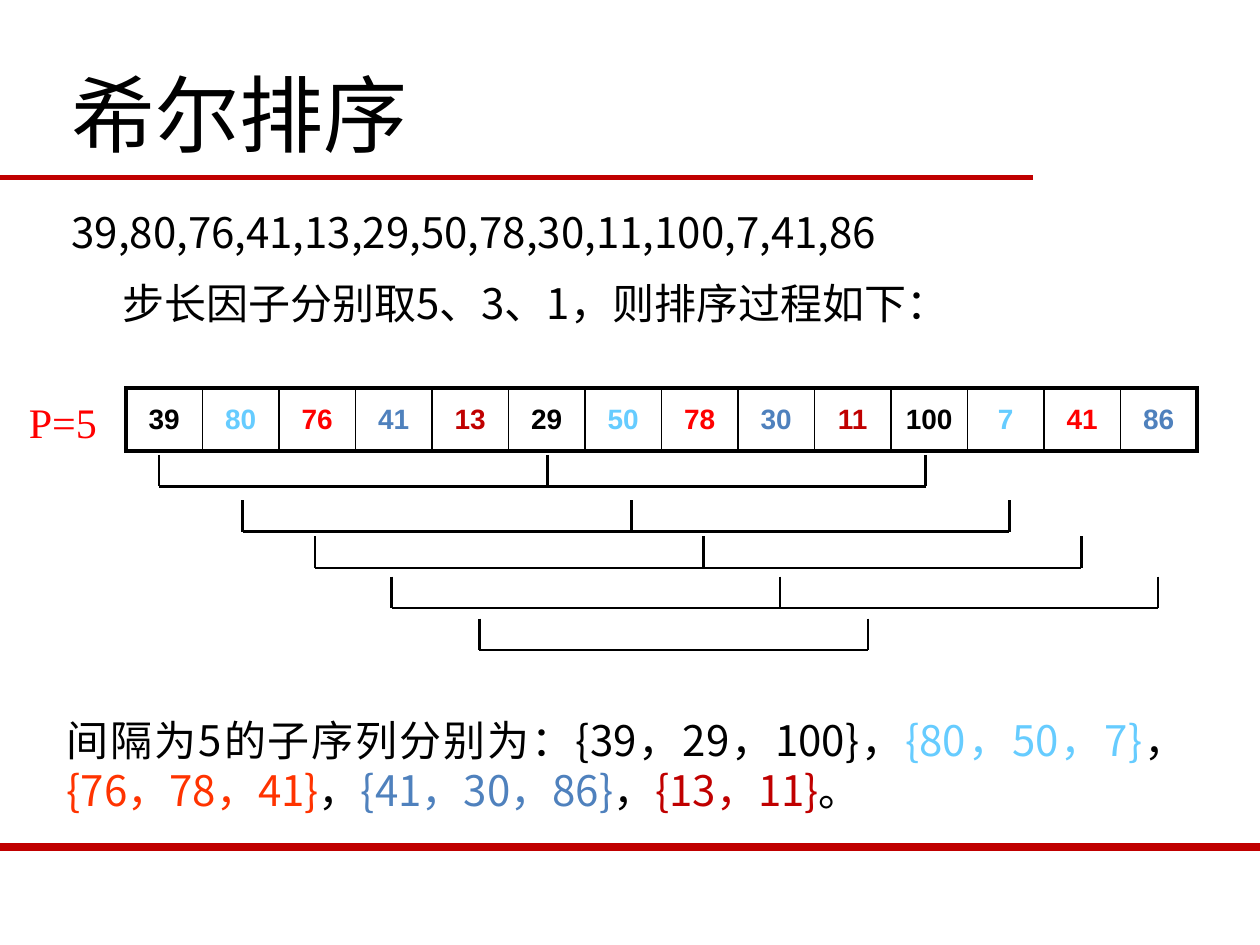
from lxml import etree
from pptx import Presentation
from pptx.dml.color import RGBColor
from pptx.enum.shapes import MSO_CONNECTOR
from pptx.enum.text import MSO_ANCHOR, PP_ALIGN
from pptx.oxml.ns import qn
from pptx.util import Pt

COLORS = {
    "black": "000000", "white": "FFFFFF", "sky": "66CCFF", "red": "FF0000",
    "orange": "FF3300", "blue": "4F81BD", "crimson": "C00000",
}
SANS = "Noto Sans CJK SC"


def write(para, spans, size, font, bold=False, **layout):
    """Fill a paragraph with (text, colour) spans."""
    for name, value in layout.items():
        setattr(para, name, value)
    for text, color in spans:
        span = para.add_run()
        span.text = text
        for name, value in {"size": Pt(size), "name": font, "bold": bold}.items():
            setattr(span.font, name, value)
        span.font.color.rgb = RGBColor.from_string(COLORS[color])
        etree.SubElement(span.font._element, qn("a:ea"), typeface=font)


def draw_line(x1, y1, x2, y2, color, width):
    line = page.shapes.add_connector(
        MSO_CONNECTOR.STRAIGHT, Pt(x1), Pt(y1), Pt(x2), Pt(y2))
    line.line.color.rgb = RGBColor.from_string(COLORS[color])
    line.line.width = Pt(width)
    etree.SubElement(line._element.spPr, qn("a:effectLst"))


deck = Presentation()
deck.slide_width, deck.slide_height = Pt(720), Pt(540)
page = deck.slides.add_slide(deck.slide_layouts[6])

# Rules under the title and at the foot
draw_line(0, 101.5, 590.4, 101.5, "crimson", 3)
draw_line(0, 483.8, 720, 483.8, "crimson", 4.5)

# Text boxes: position, top inset, size, font, alignment, line pitch, paragraphs
subsequences = [
    ("间隔为5的子序列分别为：{39，29，100}，", "black"),
    ("{80，50，7}", "sky"), ("，", "black"),
    ("{76，78，41}", "orange"), ("，", "black"),
    ("{41，30，86}", "blue"), ("，", "black"),
    ("{13，11}", "crimson"), ("。", "black"),
]
boxes = [
    ((33.8, 28, 624, 65.5), 8.4, 48, SANS, PP_ALIGN.LEFT, 57.2,
     [[("希尔排序", "black")]]),
    ((33.8, 112.3, 654, 80), 6, 24, SANS, PP_ALIGN.JUSTIFY, 28.6,
     [[("39,80,76,41,13,29,50,78,30,11,100,7,41,86", "black")],
      [("步长因子分别取5、3、1，则排序过程如下：", "black")]]),
    ((0, 221.8, 72, 36), 4.6, 24, "Times New Roman", PP_ALIGN.CENTER, None,
     [[("P=5", "red")]]),
    ((31, 402.5, 654, 65.5), 6, 24, SANS, PP_ALIGN.JUSTIFY, 28.6,
     [subsequences]),
]
for place, inset, size, font, align, pitch, paragraphs in boxes:
    frame = page.shapes.add_textbox(*map(Pt, place)).text_frame
    frame.word_wrap = True
    frame.margin_top = Pt(inset)
    for index, spans in enumerate(paragraphs):
        para = frame.add_paragraph() if index else frame.paragraphs[0]
        write(para, spans, size, font, alignment=align,
              line_spacing=Pt(pitch) if pitch else None)
        if index:
            para.space_before = Pt(12)
            para._p.get_or_add_pPr().set("marL", str(Pt(29)))

# Array being sorted; the colours repeat with the step of 5
numbers = [39, 80, 76, 41, 13, 29, 50, 78, 30, 11, 100, 7, 41, 86]
cycle = ["black", "sky", "red", "blue", "crimson"]
last = len(numbers) - 1
table = page.shapes.add_table(
    1, len(numbers), Pt(72), Pt(221.8), Pt(612), Pt(36)).table
table.first_row = table.horz_banding = False
for index, number in enumerate(numbers):
    table.columns[index].width = Pt(612 / len(numbers))
    cell = table.cell(0, index)
    cell.vertical_anchor = MSO_ANCHOR.MIDDLE
    write(cell.text_frame.paragraphs[0], [(str(number), cycle[index % 5])],
          16, "Arial", True, alignment=PP_ALIGN.CENTER)
    widths = {"lnL": 1 if index else 2.25, "lnR": 1 if index < last else 2.25,
              "lnT": 2.25, "lnB": 2.25}
    props = cell._tc.get_or_add_tcPr()
    for side, width in widths.items():
        border = etree.SubElement(props, qn(f"a:{side}"), w=str(Pt(width)))
        fill = etree.SubElement(border, qn("a:solidFill"))
        etree.SubElement(fill, qn("a:srgbClr"), val=COLORS["black"])
    cell.fill.solid()
    cell.fill.fore_color.rgb = RGBColor.from_string(COLORS["white"])

# Brackets joining the members of each subsequence: left, top, number of teeth
brackets = [(90.9, 259.9, 3), (138.7, 285.8, 3), (180, 306.5, 3),
            (223.8, 329.5, 3), (274, 353.5, 2)]
for left, top, count in brackets:
    teeth = [left + offset for offset in (0, 222, 438)[:count]]
    for x in teeth:
        draw_line(x, top, x, top + 18, "black", 1.5)
    draw_line(left, top + 18, teeth[-1], top + 18, "black", 1.5)

deck.save("out.pptx")
